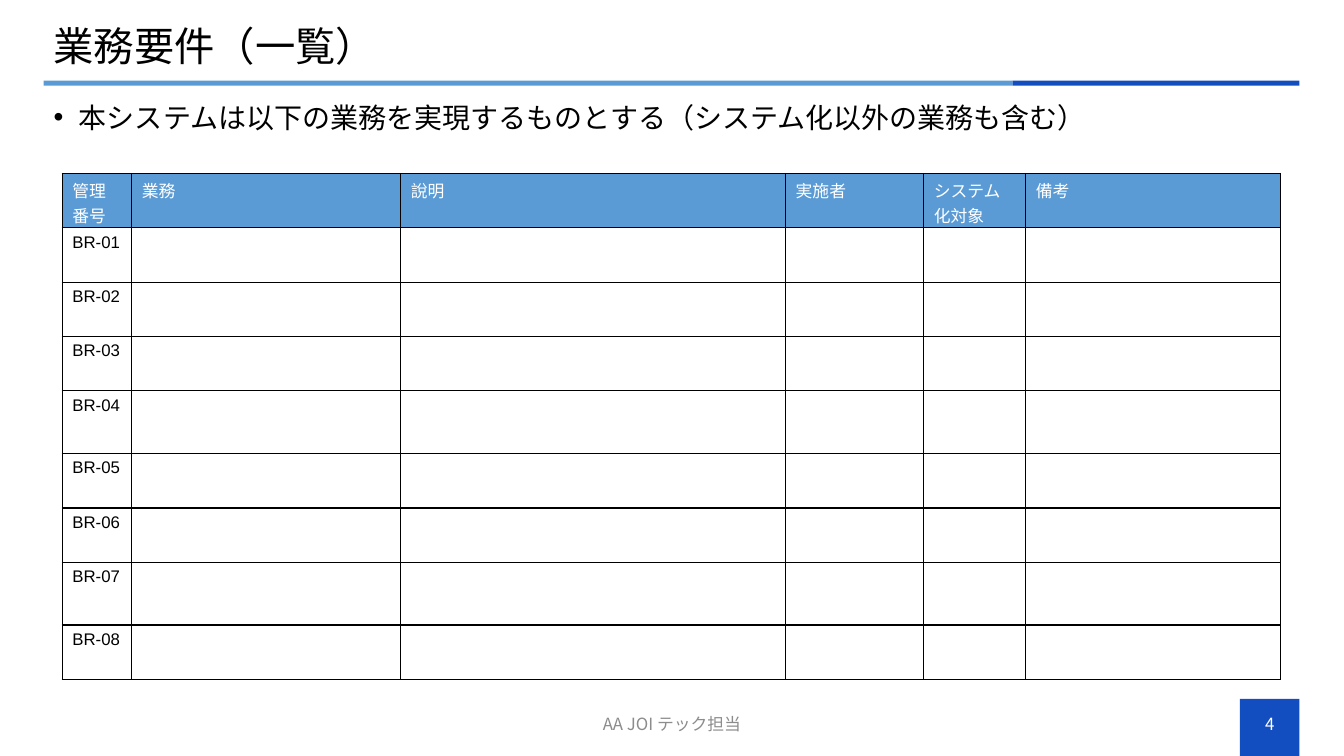
from dataclasses import dataclass

from pptx import Presentation
from pptx.dml.color import RGBColor
from pptx.enum import shapes, text
from pptx.oxml.ns import qn
from pptx.util import Cm, Pt
from lxml import etree

TITLE = "業務要件（一覧）"
LEAD = "本システムは以下の業務を実現するものとする（システム化以外の業務も含む）"
FOOTER = "AA JOI テック担当"
PAGE = "4"

# heading, column width in cm
COLUMNS = [
    ("管理番号", 1.75),
    ("業務", 6.78),
    ("說明", 9.7),
    ("実施者", 3.48),
    ("システム化対象", 2.57),
    ("備考", 6.43),
]
REQUIREMENTS = [f"BR-{number:02}" for number in range(1, 9)]
TALL_REQUIREMENTS = {"BR-04", "BR-07"}


@dataclass(frozen=True)
class Theme:
    sky: str = "5B9BD5"
    royal: str = "134EC1"
    ink: str = "000000"
    paper: str = "FFFFFF"
    muted: str = "8C8C8C"
    japanese: str = "Noto Sans CJK JP"
    latin: str = "Arial"
    title: float = 28.8
    lead: float = 20
    small: float = 12


THEME = Theme()
LEFT, CONTENT_WIDTH = 1.1, 31.65
BADGE_LEFT, BADGE_WIDTH = 31.25, 1.5
RULE_TOP, RULE_HEIGHT, RULE_SPLIT = 2.03, 0.13, 25.52
FOOTER_TOP, FOOTER_HEIGHT = 17.73, 1.02
TABLE_LEFT, TABLE_TOP = 1.57, 4.37
ROW_HEIGHT, TALL_ROW_HEIGHT = 1.37, 1.58


def style_runs(paragraph, size, color, latin=THEME.japanese):
    for run in paragraph.runs:
        run.font.size = Pt(size)
        run.font.color.rgb = RGBColor.from_string(color)
        run.font.name = latin
        east_asian = etree.Element(qn("a:ea"), typeface=THEME.japanese)
        run.font._element.find(qn("a:latin")).addnext(east_asian)


def add_block(slide, left, top, width, height, color):
    block = slide.shapes.add_shape(
        shapes.MSO_SHAPE.RECTANGLE, Cm(left), Cm(top), Cm(width), Cm(height))
    block.shadow.inherit = False
    block.fill.solid()
    block.fill.fore_color.rgb = RGBColor.from_string(color)
    block.line.fill.background()


def add_text(slide, left, top, width, height, wording, size, color,
             align=text.PP_ALIGN.LEFT, anchor=text.MSO_ANCHOR.MIDDLE):
    frame = slide.shapes.add_textbox(
        Cm(left), Cm(top), Cm(width), Cm(height)).text_frame
    frame.word_wrap = True
    frame.vertical_anchor = anchor
    frame.text = wording
    paragraph = frame.paragraphs[0]
    paragraph.alignment = align
    style_runs(paragraph, size, color)
    return paragraph


def add_bullet(paragraph, indent):
    properties = paragraph._p.get_or_add_pPr()
    properties.set("marL", str(Cm(indent)))
    properties.set("indent", str(-Cm(indent)))
    etree.SubElement(properties, qn("a:buFont"), typeface=THEME.latin)
    etree.SubElement(properties, qn("a:buChar"), char="•")


def add_borders(cell):
    """Draw a 1 pt line on all four sides; call before the cell gets its fill."""
    properties = cell._tc.get_or_add_tcPr()
    for side in ("lnL", "lnR", "lnT", "lnB"):
        line = etree.SubElement(properties, qn(f"a:{side}"), w=str(Pt(1)))
        fill = etree.SubElement(line, qn("a:solidFill"))
        etree.SubElement(fill, qn("a:srgbClr"), val=THEME.ink)


def fill_cell(cell, wording, fill, color):
    add_borders(cell)
    cell.fill.solid()
    cell.fill.fore_color.rgb = RGBColor.from_string(fill)
    cell.text = wording
    paragraph = cell.text_frame.paragraphs[0]
    paragraph.font.size = Pt(THEME.small)
    style_runs(paragraph, THEME.small, color, THEME.latin)


def add_requirements_table(slide):
    headings, widths = zip(*COLUMNS)
    blanks = [""] * (len(COLUMNS) - 1)
    rows = [list(headings)] + [[code] + blanks for code in REQUIREMENTS]
    heights = [TALL_ROW_HEIGHT if row[0] in TALL_REQUIREMENTS else ROW_HEIGHT
               for row in rows]
    table = slide.shapes.add_table(
        len(rows), len(COLUMNS), Cm(TABLE_LEFT), Cm(TABLE_TOP),
        Cm(sum(widths)), Cm(sum(heights))).table
    for column, width in zip(table.columns, widths):
        column.width = Cm(width)
    for index, (row, height) in enumerate(zip(rows, heights)):
        table.rows[index].height = Cm(height)
        fill, color = (THEME.paper, THEME.ink) if index else (THEME.sky, THEME.paper)
        for cell, wording in zip(table.rows[index].cells, row):
            fill_cell(cell, wording, fill, color)


def main():
    deck = Presentation()
    deck.slide_width, deck.slide_height = Cm(33.87), Cm(19.05)
    slide = deck.slides.add_slide(deck.slide_layouts[6])
    right = LEFT + CONTENT_WIDTH

    add_block(slide, BADGE_LEFT, 17.61, BADGE_WIDTH, 1.44, THEME.royal)
    add_block(slide, LEFT, RULE_TOP, RULE_SPLIT - LEFT, RULE_HEIGHT, THEME.sky)
    add_block(slide, RULE_SPLIT, RULE_TOP, right - RULE_SPLIT, RULE_HEIGHT, THEME.royal)

    title = add_text(slide, LEFT, 0.53, CONTENT_WIDTH, 1.4, TITLE,
                     THEME.title, THEME.ink)
    title.line_spacing = 0.9
    lead = add_text(slide, LEFT, 2.24, CONTENT_WIDTH, 1.4, LEAD,
                    THEME.lead, THEME.ink, anchor=text.MSO_ANCHOR.TOP)
    add_bullet(lead, 0.64)
    lead.line_spacing = 1.2

    add_text(slide, BADGE_LEFT, FOOTER_TOP, BADGE_WIDTH, FOOTER_HEIGHT, PAGE,
             THEME.small, THEME.paper, text.PP_ALIGN.CENTER)
    add_requirements_table(slide)
    add_text(slide, 11.22, FOOTER_TOP, 11.43, FOOTER_HEIGHT, FOOTER,
             THEME.small, THEME.muted, text.PP_ALIGN.CENTER)
    deck.save("out.pptx")


if __name__ == "__main__":
    main()
